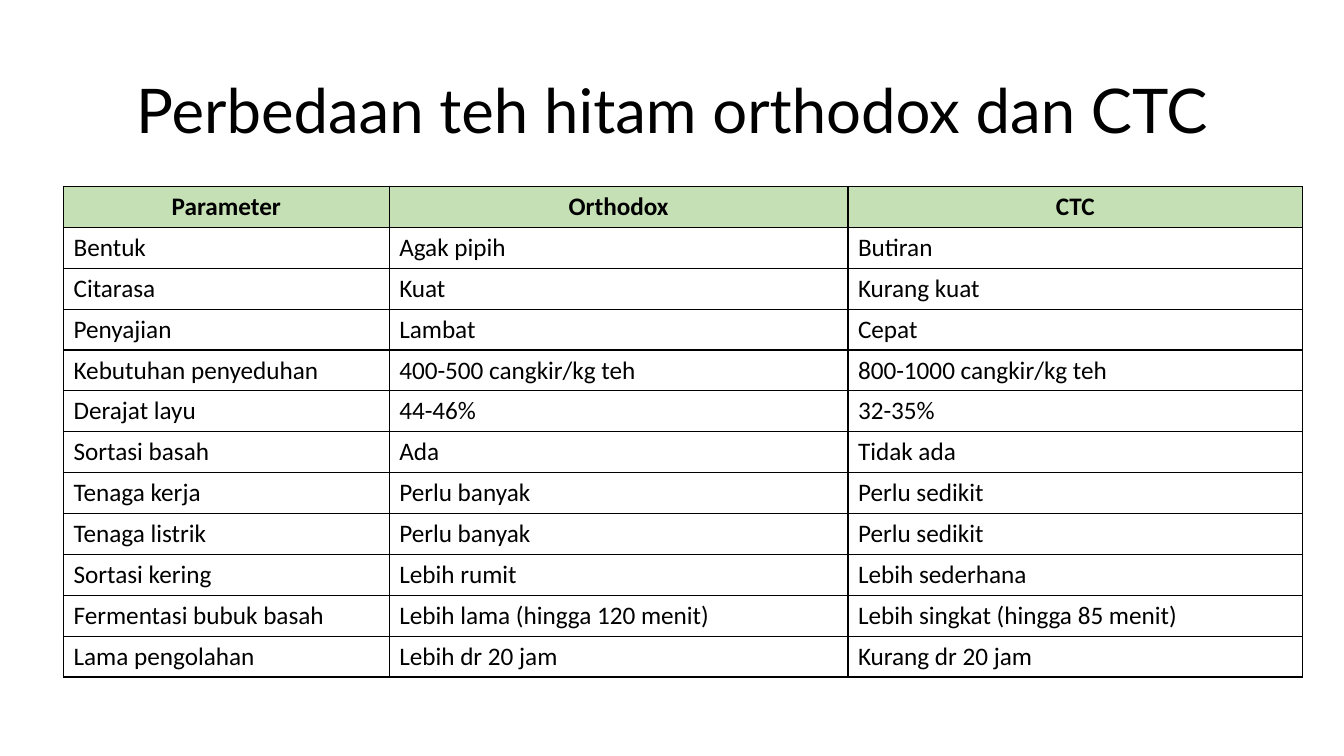
from dataclasses import dataclass

from lxml.etree import SubElement
from pptx import Presentation
from pptx.dml.color import RGBColor
from pptx.enum.text import MSO_ANCHOR, PP_ALIGN
from pptx.oxml.ns import qn
from pptx.util import Inches, Pt

# Content
TITLE = "Perbedaan teh hitam orthodox dan CTC"
HEADER = ("Parameter", "Orthodox", "CTC")
COMPARISON = [
    ("Bentuk", "Agak pipih", "Butiran"),
    ("Citarasa", "Kuat", "Kurang kuat"),
    ("Penyajian", "Lambat", "Cepat"),
    ("Kebutuhan penyeduhan", "400-500 cangkir/kg teh", "800-1000 cangkir/kg teh"),
    ("Derajat layu", "44-46%", "32-35%"),
    ("Sortasi basah", "Ada", "Tidak ada"),
    ("Tenaga kerja", "Perlu banyak", "Perlu sedikit"),
    ("Tenaga listrik", "Perlu banyak", "Perlu sedikit"),
    ("Sortasi kering", "Lebih rumit", "Lebih sederhana"),
    ("Fermentasi bubuk basah", "Lebih lama (hingga 120 menit)",
     "Lebih singkat (hingga 85 menit)"),
    ("Lama pengolahan", "Lebih dr 20 jam", "Kurang dr 20 jam"),
]


@dataclass(frozen=True)
class Theme:
    title_font: str = "Lato"
    table_font: str = "Calibri"
    title_size: int = 44
    table_size: int = 18
    border_width: int = 1
    ink: str = "000000"
    header_fill: str = "C5E0B4"
    body_fill: str = "FFFFFF"


THEME = Theme()

# Layout in inches
SLIDE_SIZE = (13.33, 7.5)
TITLE_BOX = (0.92, 0.4, 11.5, 1.45)
TABLE_LEFT, TABLE_TOP, TABLE_HEIGHT = 0.63, 1.85, 4.87
COLUMN_WIDTHS = (3.23, 4.55, 4.51)


def style_paragraph(paragraph, font_name, size, alignment, bold=False):
    paragraph.alignment = alignment
    font = paragraph.font
    font.name, font.size, font.bold = font_name, Pt(size), bold
    font.color.rgb = RGBColor.from_string(THEME.ink)


def add_borders(cell):
    properties = cell._tc.get_or_add_tcPr()
    for position, side in enumerate(("a:lnL", "a:lnR", "a:lnT", "a:lnB")):
        line = SubElement(properties, qn(side), w=str(Pt(THEME.border_width)))
        fill = SubElement(line, qn("a:solidFill"))
        SubElement(fill, qn("a:srgbClr"), val=THEME.ink)
        # Borders come before the cell fill in the schema
        properties.insert(position, line)


def add_title(slide):
    box = slide.shapes.add_textbox(*map(Inches, TITLE_BOX))
    frame = box.text_frame
    frame.word_wrap = True
    frame.vertical_anchor = MSO_ANCHOR.MIDDLE
    frame.text = TITLE
    paragraph = frame.paragraphs[0]
    paragraph.line_spacing = 0.9
    style_paragraph(paragraph, THEME.title_font, THEME.title_size, PP_ALIGN.CENTER)


def add_comparison(slide):
    rows = [HEADER, *COMPARISON]
    frame = slide.shapes.add_table(
        len(rows), len(HEADER), Inches(TABLE_LEFT), Inches(TABLE_TOP),
        Inches(sum(COLUMN_WIDTHS)), Inches(TABLE_HEIGHT))
    table = frame.table
    for column, width in zip(table.columns, COLUMN_WIDTHS):
        column.width = Inches(width)
    for row_index, row in enumerate(rows):
        is_header = row_index == 0
        fill_color = THEME.header_fill if is_header else THEME.body_fill
        alignment = PP_ALIGN.CENTER if is_header else PP_ALIGN.LEFT
        for column_index, text in enumerate(row):
            cell = table.cell(row_index, column_index)
            cell.text = text
            cell.fill.solid()
            cell.fill.fore_color.rgb = RGBColor.from_string(fill_color)
            style_paragraph(cell.text_frame.paragraphs[0], THEME.table_font,
                            THEME.table_size, alignment, bold=is_header)
            add_borders(cell)


def main():
    presentation = Presentation()
    presentation.slide_width, presentation.slide_height = map(Inches, SLIDE_SIZE)
    slide = presentation.slides.add_slide(presentation.slide_layouts[6])
    add_title(slide)
    add_comparison(slide)
    presentation.save("out.pptx")


if __name__ == "__main__":
    main()
